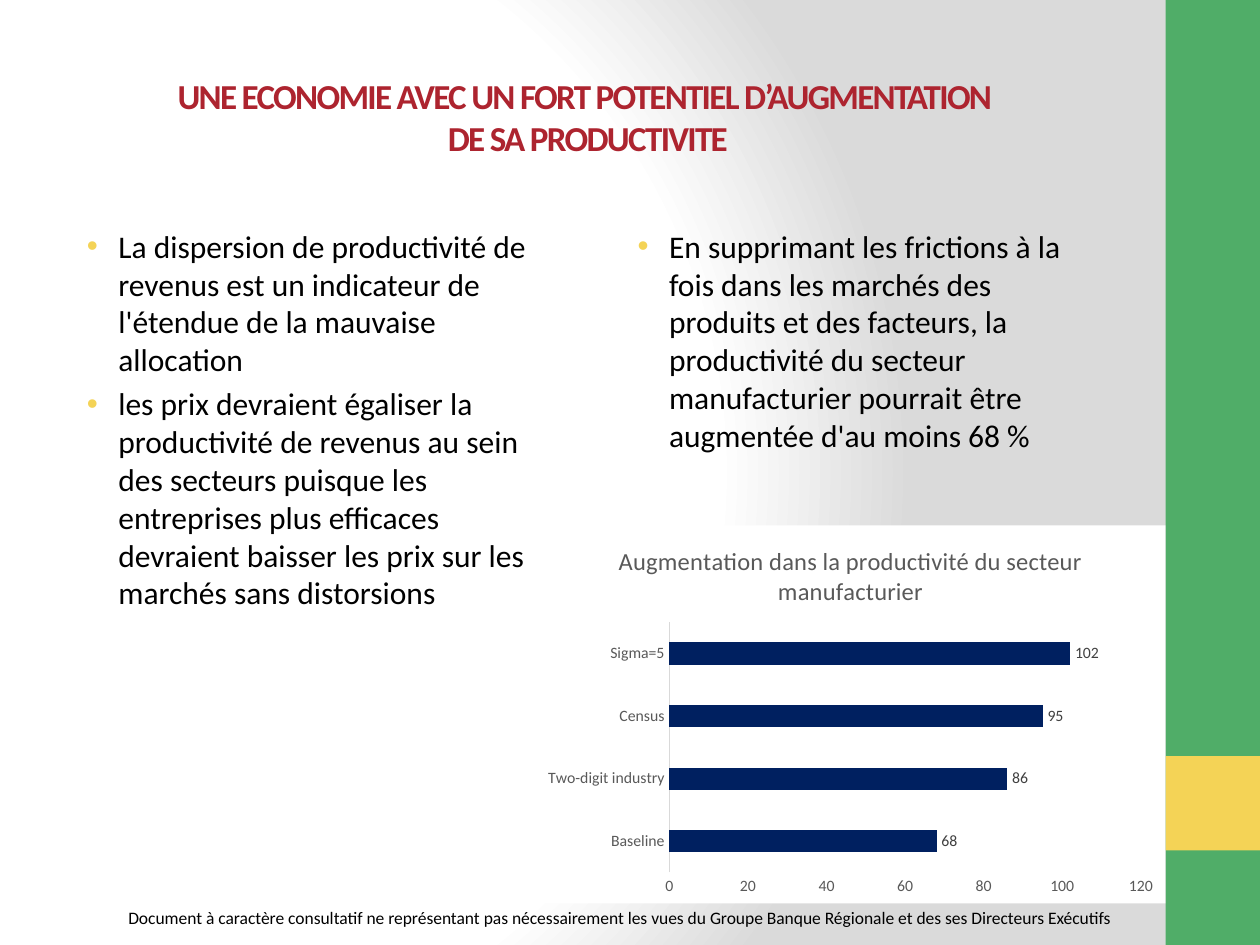
import pptx
import pptx.util
import pptx.chart.data
import pptx.dml.color
import pptx.enum.chart
import pptx.enum.shapes
import pptx.enum.text
import pptx.oxml
import pptx.oxml.ns

Inches = pptx.util.Inches
Pt = pptx.util.Pt
RGBColor = pptx.dml.color.RGBColor

GREEN = RGBColor(0x50, 0xAD, 0x68)
GOLD = RGBColor(0xF4, 0xD3, 0x56)
RED = RGBColor(0xAD, 0x24, 0x2F)
NAVY = RGBColor(0x00, 0x20, 0x60)
BLACK = RGBColor(0, 0, 0)
WHITE = RGBColor(0xFF, 0xFF, 0xFF)
PALE = RGBColor(0xDA, 0xDA, 0xDA)
RULE = RGBColor(0xD9, 0xD9, 0xD9)
GREY = RGBColor(0x59, 0x59, 0x59)
DARK = RGBColor(0x40, 0x40, 0x40)
FACE = "Calibri"
NS = pptx.oxml.ns.nsdecls("a", "c")


def box(left, top, width, height):
    """Return a box in inches as lengths."""
    return tuple(Inches(side) for side in (left, top, width, height))


def place(shape, area):
    """Move a shape into its box."""
    shape.left, shape.top, shape.width, shape.height = area


def style(font, size, color, bold=False):
    """Set face, size, colour and weight of a font."""
    font.name = FACE
    font.size = Pt(size)
    font.bold = bold
    font.color.rgb = color


def add_run(para, text, size, color, bold=False):
    """Add one styled run to a paragraph."""
    run = para.add_run()
    run.text = text
    style(run.font, size, color, bold)
    return run


def draw_back(slide):
    """Fill the background with a round white to grey gradient."""
    slide.background.fill.gradient()
    old = slide.element.find(".//" + pptx.oxml.ns.qn("a:gradFill"))
    stops = "".join(
        f'<a:gs pos="{pos * 1000}"><a:srgbClr val="{color}"/></a:gs>'
        for pos, color in ((0, WHITE), (75, WHITE), (100, PALE)))
    new = pptx.oxml.parse_xml(
        f'<a:gradFill {NS} rotWithShape="1"><a:gsLst>{stops}</a:gsLst>'
        '<a:path path="circle"><a:fillToRect l="20000" t="50000" '
        'r="100000" b="50000"/></a:path></a:gradFill>')
    old.getparent().replace(old, new)


def draw_band(slide, area):
    """Draw the green side band with its gold square."""
    left, top, width, height = area
    square = (left, top + height - 2 * width, width, width)
    for part, color in ((area, GREEN), (square, GOLD)):
        rect = slide.shapes.add_shape(
            pptx.enum.shapes.MSO_SHAPE.RECTANGLE, *part)
        rect.shadow.inherit = False
        rect.fill.solid()
        rect.fill.fore_color.rgb = color
        rect.line.fill.background()


def draw_note(slide, area):
    """Write the disclaimer at the foot."""
    frame = slide.shapes.add_textbox(*area).text_frame
    frame.word_wrap = True
    add_run(frame.paragraphs[0],
            "Document à caractère consultatif ne représentant pas "
            "nécessairement les vues du Groupe Banque Régionale et des ses "
            "Directeurs Exécutifs", 10, BLACK)


def draw_title(slide, area):
    """Write the two title lines."""
    title = slide.shapes.title
    place(title, area)
    frame = title.text_frame
    frame.auto_size = pptx.enum.text.MSO_AUTO_SIZE.NONE
    frame.vertical_anchor = pptx.enum.text.MSO_ANCHOR.MIDDLE
    para = frame.paragraphs[0]
    para.alignment = pptx.enum.text.PP_ALIGN.CENTER
    lines = ("UNE ECONOMIE AVEC UN FORT POTENTIEL D’AUGMENTATION ",
             "DE SA PRODUCTIVITE")
    for rank, line in enumerate(lines):
        if rank:
            para.add_line_break()
        run = add_run(para, line, 20, RED, True)
        run.font._element.set("spc", "-100")


def draw_list(shape, area, items):
    """Fill a body placeholder with gold bullets."""
    place(shape, area)
    frame = shape.text_frame
    frame.auto_size = pptx.enum.text.MSO_AUTO_SIZE.NONE
    for rank, item in enumerate(items):
        para = frame.add_paragraph() if rank else frame.paragraphs[0]
        props = para._p.get_or_add_pPr()
        props.set("marL", str(Inches(0.38)))
        props.set("indent", str(Inches(-0.25)))
        for mark in (f'<a:buClr {NS}><a:srgbClr val="{GOLD}"/></a:buClr>',
                     f'<a:buFont {NS} typeface="Arial"/>',
                     f'<a:buChar {NS} char="•"/>'):
            props.append(pptx.oxml.parse_xml(mark))
        para.space_before = Pt(3.6 if rank else 0)
        add_run(para, item, 18, BLACK)


def draw_chart(slide, area):
    """Draw the bar chart of gains on a white ground."""
    name = "Augmentation dans la productivité du secteur manufacturier"
    data = pptx.chart.data.CategoryChartData()
    data.categories = ["Baseline", "Two-digit industry", "Census", "Sigma=5"]
    data.add_series(name, (68, 86, 95, 102))
    chart = slide.shapes.add_chart(
        pptx.enum.chart.XL_CHART_TYPE.BAR_CLUSTERED, *area, data).chart
    style(chart.font, 10, BLACK)
    chart.font._element.getparent().getparent().getparent().addprevious(
        pptx.oxml.parse_xml(
            f'<c:spPr {NS}><a:solidFill><a:srgbClr val="{WHITE}"/>'
            '</a:solidFill><a:ln><a:noFill/></a:ln></c:spPr>'))
    chart.has_legend = False
    chart.has_title = True
    chart.chart_title.include_in_layout = False
    add_run(chart.chart_title.text_frame.paragraphs[0], name, 14, GREY)

    for axis in (chart.category_axis, chart.value_axis):
        axis.has_major_gridlines = False
        axis.major_tick_mark = pptx.enum.chart.XL_TICK_MARK.NONE
        axis.minor_tick_mark = pptx.enum.chart.XL_TICK_MARK.NONE
        style(axis.tick_labels.font, 9, GREY)
    chart.category_axis.format.line.color.rgb = RULE
    chart.category_axis.format.line.width = Pt(0.75)
    scale = chart.value_axis
    scale.format.line.fill.background()
    scale.minimum_scale, scale.maximum_scale = 0, 120
    scale.major_unit = 20

    plot = chart.plots[0]
    plot.gap_width = 182
    plot.vary_by_categories = False
    fill = plot.series[0].format.fill
    fill.solid()
    fill.fore_color.rgb = NAVY
    plot.has_data_labels = True
    labels = plot.data_labels
    labels.show_value = True
    labels.position = pptx.enum.chart.XL_LABEL_POSITION.OUTSIDE_END
    style(labels.font, 9, DARK)


def main():
    """Build the slide and save it."""
    deck = pptx.Presentation()
    deck.slide_width, deck.slide_height = Inches(10), Inches(7.5)
    slide = deck.slides.add_slide(deck.slide_layouts[3])
    draw_back(slide)
    draw_band(slide, box(9.25, 0, 0.75, 7.5))
    draw_note(slide, box(0.92, 7.15, 8.83, 0.27))
    draw_title(slide, box(0.5, 0.3, 8.33, 1.25))
    draw_list(slide.placeholders[1], box(0.46, 1.75, 4, 4.32), (
        "La dispersion de productivité de revenus est un indicateur de "
        "l'étendue de la mauvaise allocation",
        "les prix devraient égaliser la productivité de revenus au sein des "
        "secteurs puisque les entreprises plus efficaces devraient baisser "
        "les prix sur les marchés sans distorsions"))
    draw_list(slide.placeholders[2], box(4.83, 1.75, 4, 4.32), (
        "En supprimant les frictions à la fois dans les marchés des produits "
        "et des facteurs, la productivité du secteur manufacturier pourrait "
        "être augmentée d'au moins 68 %",))
    draw_chart(slide, box(4.25, 4.17, 5, 3))
    deck.save("out.pptx")


if __name__ == "__main__":
    main()
